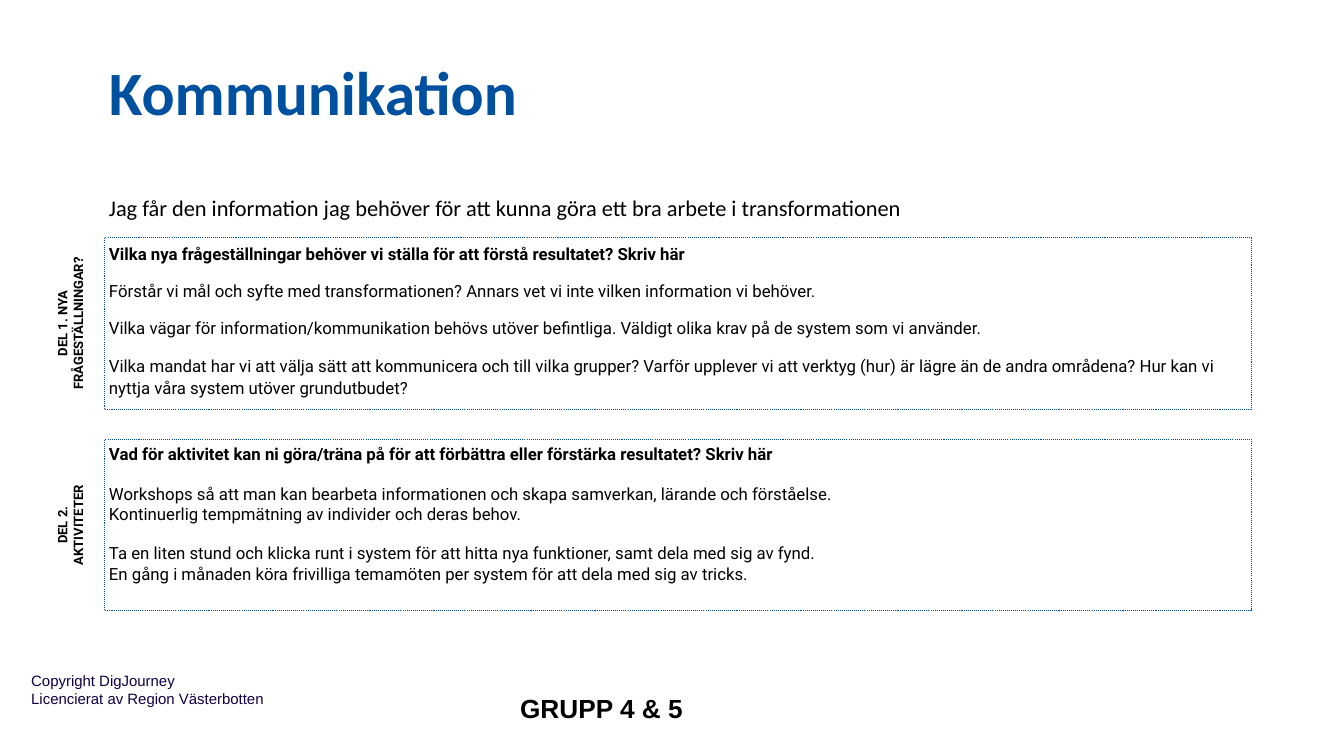
from lxml.etree import SubElement
from pptx import Presentation
from pptx.dml.color import RGBColor
from pptx.enum.dml import MSO_LINE
from pptx.enum.text import MSO_ANCHOR, MSO_AUTO_SIZE, PP_ALIGN
from pptx.oxml.ns import qn
from pptx.util import Inches, Pt

BLUE = RGBColor(0x00, 0x50, 0xA0)
NAVY = RGBColor(0x11, 0x00, 0x46)
BLACK = RGBColor(0, 0, 0)

TITLE = "Kommunikation"
LEAD = "Jag får den information jag behöver för att kunna göra ett bra arbete i transformationen"
PARTS = [
    {
        "label": ["DEL 1. NYA FRÅGESTÄLLNINGAR?"],
        "lines": [
            ("Vilka nya frågeställningar behöver vi ställa för att förstå resultatet? Skriv här", 0),
            ("Förstår vi mål och syfte med transformationen? Annars vet vi inte vilken information vi behöver.", 10.7),
            ("Vilka vägar för information/kommunikation behövs utöver befintliga. Väldigt olika krav på de system som vi använder.", 10.7),
            ("Vilka mandat har vi att välja sätt att kommunicera och till vilka grupper? Varför upplever vi att verktyg (hur) är lägre än de andra områdena? Hur kan vi nyttja våra system utöver grundutbudet?", 10.7),
        ],
        "pitch": 1.1,
    },
    {
        "label": ["DEL 2.", "AKTIVITETER"],
        "lines": [
            ("Vad för aktivitet kan ni göra/träna på för att förbättra eller förstärka resultatet? Skriv här", 0),
            ("Workshops så att man kan bearbeta informationen och skapa samverkan, lärande och förståelse.", 14),
            ("Kontinuerlig tempmätning av individer och deras behov.", 0),
            ("Ta en liten stund och klicka runt i system för att hitta nya funktioner, samt dela med sig av fynd.\vEn gång i månaden köra frivilliga temamöten per system för att dela med sig av tricks.", 14),
        ],
        "pitch": 1.0,
    },
]
CREDIT = ["Copyright DigJourney", "Licencierat av Region Västerbotten"]
GROUP = "GRUPP 4 & 5"

LEFT, TOP, WIDE, HIGH, STEP = 1.04, 2.36, 11.37, 1.7, 2.0
TAG_X, TAG_H = -0.15, 0.58


def place(shape, left, top, width, height):
    shape.left, shape.top = Inches(left), Inches(top)
    shape.width, shape.height = Inches(width), Inches(height)


def frame(shape, inset, anchor=MSO_ANCHOR.TOP):
    box = shape.text_frame
    box.word_wrap = True
    box.auto_size = MSO_AUTO_SIZE.NONE
    box.vertical_anchor = anchor
    box.margin_left = box.margin_right = Inches(inset)
    box.margin_top = box.margin_bottom = Inches(inset)
    return box


def write(box, lines, face, size, color, bold=False, align=PP_ALIGN.LEFT, pitch=1.0):
    for row, (text, gap) in enumerate(lines):
        para = box.paragraphs[0] if row == 0 else box.add_paragraph()
        para.text = text
        para.alignment = align
        para.line_spacing = pitch
        para.space_before = Pt(gap)
        props = para._p.get_or_add_pPr()
        props.set("marL", "0")
        props.set("indent", "0")
        SubElement(props, qn("a:buNone"))
        font = para.font
        font.name, font.size, font.bold = face, Pt(size), bold
        font.color.rgb = color


def label(slide, spot, lines, *style, **more):
    shape = slide.shapes.add_textbox(*map(Inches, spot))
    write(frame(shape, 0.13), [(line, 0) for line in lines], *style, **more)
    return shape


def main():
    deck = Presentation()
    deck.slide_width, deck.slide_height = Inches(13.33), Inches(7.5)
    slide = deck.slides.add_slide(deck.slide_layouts[4])
    title, lead, first, spare, second = slide.placeholders
    spare._element.getparent().remove(spare._element)

    place(title, LEFT, -0.05, 9.92, 1.36)
    write(frame(title, 0.04, MSO_ANCHOR.BOTTOM), [(TITLE, 0)], "Calibri", 44, BLUE, True)
    place(lead, LEFT, 1.44, 8.07, 0.79)
    write(frame(lead, 0.04, MSO_ANCHOR.BOTTOM), [(LEAD, 0)], "Calibri", 16, BLACK)
    lead.text_frame.paragraphs[0].space_after = Pt(5.3)

    for row, (panel, part) in enumerate(zip((first, second), PARTS)):
        top = TOP + row * STEP
        place(panel, LEFT, top, WIDE, HIGH)
        panel.line.color.rgb = BLUE
        panel.line.width = Pt(0.75)
        panel.line.dash_style = MSO_LINE.ROUND_DOT
        box = frame(panel, 0.04)
        write(box, part["lines"], "Roboto", 12, BLACK, pitch=part["pitch"])
        box.paragraphs[0].font.bold = True

        spot = (TAG_X, top + (HIGH - TAG_H) / 2, HIGH, TAG_H)
        tag = label(slide, spot, part["label"], "Roboto", 9.3, BLACK, True, PP_ALIGN.CENTER)
        tag.rotation = 270

    label(slide, (0.18, 6.53, 4.37, 0.63), CREDIT, "Arial", 10.7, NAVY)
    label(slide, (4.99, 6.74, 1.95, 0.58), [GROUP], "Arial", 18.7, BLACK, True, PP_ALIGN.CENTER)
    deck.save("out.pptx")


if __name__ == "__main__":
    main()
